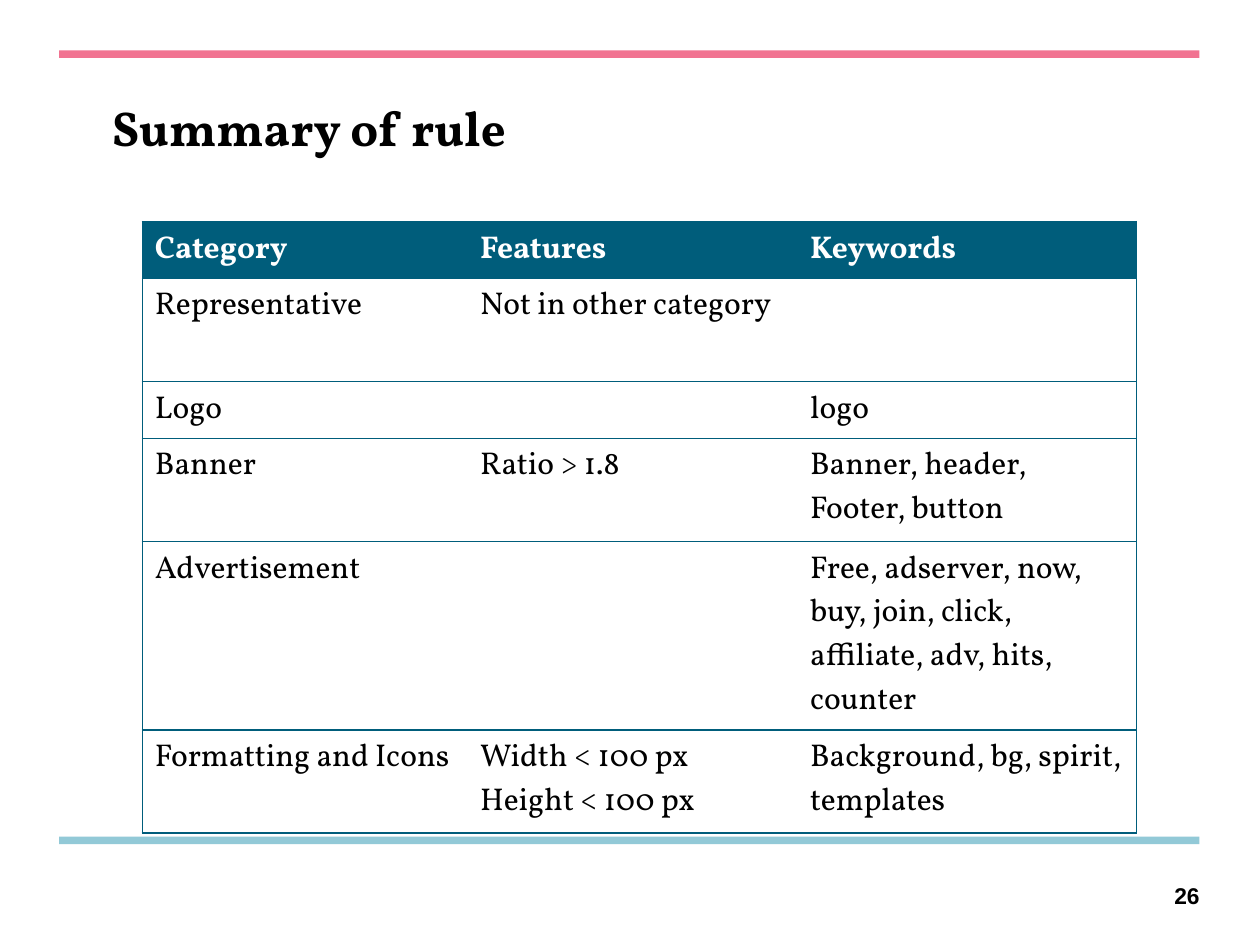
from lxml import etree
from pptx import Presentation
from pptx import util as u
from pptx.dml.color import RGBColor
from pptx.enum import shapes, text
from pptx.oxml import ns

TEAL = "005D7B"
FACE = "Vollkorn"
COLS = [2.58, 2.62, 2.69]
TALL = [0.45, 0.82, 0.45, 0.82, 1.23, 0.82]
ROWS = [
    ["Category", "Features", "Keywords"],
    ["Representative", "Not in other category", ""],
    ["Logo", "", "logo"],
    ["Banner", "Ratio > 1.8", "Banner, header,\nFooter, button"],
    ["Advertisement", "",
     "Free, adserver, now, buy, join, click, affiliate, adv, hits, counter"],
    ["Formatting and Icons", "Width < 100 px\nHeight < 100 px",
     "Background, bg, spirit, templates"],
]


def tint(hex):
    """Turn a hex string into a colour."""
    return RGBColor.from_string(hex)


def style(para, size, face, hue, bold):
    """Set the font of a paragraph."""
    font = para.font
    font.size, font.name, font.bold = u.Pt(size), face, bold
    font.color.rgb = tint(hue)


def band(slide, box, hue):
    """Draw a plain coloured bar."""
    bar = slide.shapes.add_shape(shapes.MSO_SHAPE.RECTANGLE, *map(u.Inches, box))
    bar.shadow.inherit = False
    bar.fill.solid()
    bar.fill.fore_color.rgb = tint(hue)
    bar.line.fill.background()


def label(slide, box, words):
    """Add a wrapping text box and return its frame and paragraph."""
    frame = slide.shapes.add_textbox(*map(u.Inches, box)).text_frame
    frame.word_wrap = True
    frame.text = words
    return frame, frame.paragraphs[0]


def title(slide, box, words):
    """Place the slide title."""
    para = label(slide, box, words)[1]
    para.line_spacing = u.Pt(34)
    style(para, 28, FACE, "000000", True)


def number(slide, box, words):
    """Place the page number."""
    frame, para = label(slide, box, words)
    frame.margin_left = frame.margin_right = frame.margin_bottom = 0
    frame.margin_top = u.Inches(0.02)
    para.alignment = text.PP_ALIGN.RIGHT
    style(para, 13, "Arial", "000000", True)


def edge(cell, sides):
    """Rule the given sides of a cell and clear the others."""
    props = cell._tc.get_or_add_tcPr()
    for side in "LRTB":
        line = etree.SubElement(props, ns.qn("a:ln" + side), w=str(u.Pt(1)))
        if side in sides:
            fill = etree.SubElement(line, ns.qn("a:solidFill"))
            etree.SubElement(fill, ns.qn("a:srgbClr"), val=TEAL)
        else:
            etree.SubElement(line, ns.qn("a:noFill"))


def grid(slide, left, top):
    """Build the table of rules."""
    size = map(u.Inches, (left, top, sum(COLS), sum(TALL)))
    table = slide.shapes.add_table(len(ROWS), len(COLS), *size).table
    table.first_row = table.horz_banding = False
    for col, wide in zip(table.columns, COLS):
        col.width = u.Inches(wide)
    for r, (row, tall) in enumerate(zip(ROWS, TALL)):
        table.rows[r].height = u.Inches(tall)
        for c, words in enumerate(row):
            cell = table.cell(r, c)
            cell.text = words
            edge(cell, "TB" + ("L", "", "R")[c])
            head = r == 0
            if head:
                cell.fill.solid()
                cell.fill.fore_color.rgb = tint(TEAL)
            else:
                cell.fill.background()
            for para in cell.text_frame.paragraphs:
                style(para, 18, FACE, "FFFFFF" if head else "000000", head)


def main():
    """Build and save the slide."""
    deck = Presentation()
    deck.slide_width, deck.slide_height = u.Inches(10), u.Inches(7.5)
    slide = deck.slides.add_slide(deck.slide_layouts[6])
    for top, hue in ((6.64, "92C9D7"), (0.4, "F17391")):
        band(slide, (0.47, top, 9.05, 0.06), hue)
    grid(slide, 1.13, 1.76)
    title(slide, (0.79, 0.72, 8.74, 1.1), "Summary of rule")
    number(slide, (9.13, 6.98, 0.39, 0.27), "26")
    deck.save("out.pptx")


if __name__ == "__main__":
    main()
